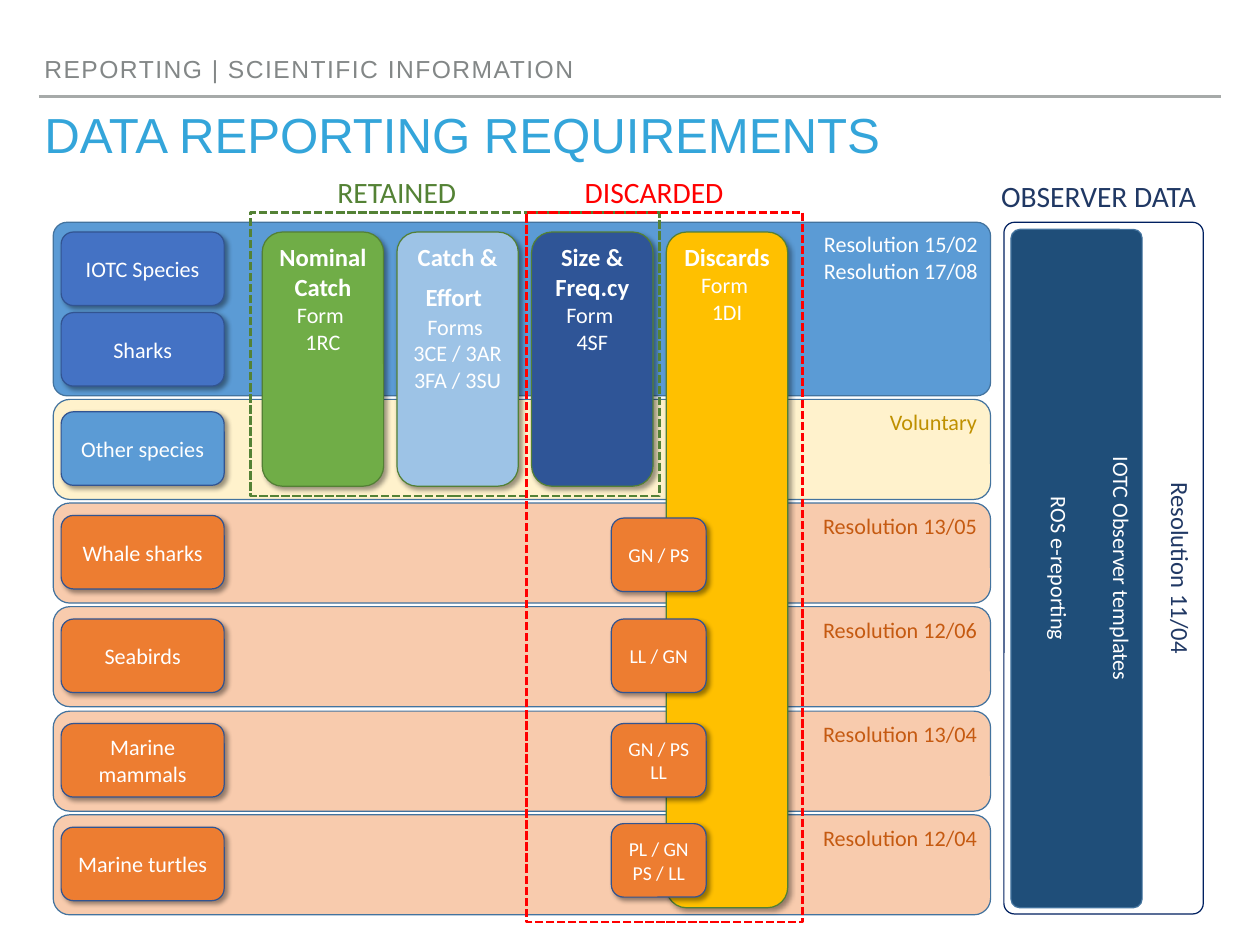
from lxml.etree import SubElement
from pptx import Presentation
from pptx.dml.color import RGBColor
from pptx.enum.dml import MSO_LINE
from pptx.enum.shapes import MSO_CONNECTOR, MSO_SHAPE
from pptx.enum.text import MSO_ANCHOR, MSO_AUTO_SIZE, PP_ALIGN
from pptx.oxml.ns import qn
from pptx.util import Emu, Pt

PX = 9144  # EMU in one px, 100 px to the inch

COLORS = {
    "rule": "A6AAA9", "kicker": "838787", "title": "34A5DA", "white": "FFFFFF",
    "navy": "203864", "navy_line": "002060", "band_line": "43739E",
    "label_line": "325491", "column_line": "538035",
    "blue": "5B9BD5", "cream": "FFF2CC", "peach": "F8CBAD",
    "gold_text": "BF9000", "rust_text": "C55A11",
    "indigo": "4472C4", "orange": "ED7D31", "green": "70AD47",
    "sky": "9DC3E6", "royal": "2F5597", "amber": "FFC000",
    "retained": "548235", "discarded": "FF0000", "observer": "1F4E79",
}

BAND_LEFT, BAND_WIDTH, BAND_HEIGHT = 60, 1058, 113
LABEL_HEIGHT = 83
TOP_LABELS = [("IOTC Species", 262), ("Sharks", 353)]
# label, label fill, resolution, band fill, resolution color
LOWER_ROWS = [
    ("Other species", "blue", "Voluntary", "cream", "gold_text"),
    ("Whale sharks", "orange", "Resolution 13/05", "peach", "rust_text"),
    ("Seabirds", "orange", "Resolution 12/06", "peach", "rust_text"),
    ("Marine mammals", "orange", "Resolution 13/04", "peach", "rust_text"),
    ("Marine turtles", "orange", "Resolution 12/04", "peach", "rust_text"),
]
# heading runs, form lines, fill, height
COLUMNS = [
    ([("Nominal Catch", 20, True)], ["Form ", "1RC"], "green", 287),
    ([("Catch & Effort", 20, True), (" ", 28, True)],
     ["Forms ", "3CE / 3AR", "3FA / 3SU"], "sky", 287),
    ([("Size & Freq.cy", 20, True)], ["Form ", "4SF"], "royal", 287),
    ([("Discards", 20, True)], ["Form ", "1DI"], "amber", 763),
]
GEARS = [("GN / PS", 585), ("LL / GN", 699), ("GN / PS LL", 817), ("PL / GN PS / LL", 930)]


def rgb(name):
    return RGBColor.from_string(COLORS[name])


def place(shape, box):
    shape.left, shape.top, shape.width, shape.height = (Emu(v * PX) for v in box)


def add_run(paragraph, text, size, color, bold=False, font="Calibri"):
    run = paragraph.add_run()
    run.text = text
    run.font.name, run.font.size, run.font.bold = font, Pt(size), bold
    run.font.color.rgb = rgb(color)
    return run


def write(shape, paragraphs, color, align, anchor=MSO_ANCHOR.TOP, gap=0):
    """Each paragraph is a list of (text, size, bold) runs."""
    frame = shape.text_frame
    frame.word_wrap = True
    frame.vertical_anchor = anchor
    for index, runs in enumerate(paragraphs):
        paragraph = frame.add_paragraph() if index else frame.paragraphs[0]
        paragraph.alignment = align
        if index and gap:
            paragraph.space_before = Pt(gap)
        for text, size, bold in runs:
            add_run(paragraph, text, size, color, bold)


def add_box(slide, box, fill, line, kind=MSO_SHAPE.ROUNDED_RECTANGLE, radius=None):
    shape = slide.shapes.add_shape(kind, *(Emu(v * PX) for v in box))
    shape.shadow.inherit = False
    if fill:
        shape.fill.solid()
        shape.fill.fore_color.rgb = rgb(fill)
    else:
        shape.fill.background()
    shape.line.color.rgb = rgb(line)
    shape.line.width = Pt(1)
    if radius:
        shape.adjustments[0] = radius
    return shape


def add_raised_box(slide, box, fill, line):
    shape = add_box(slide, box, fill, line)
    effects = shape.element.spPr.find(qn("a:effectLst"))
    shadow = SubElement(effects, qn("a:outerShdw"), blurRad=str(Pt(4)), dist=str(Pt(3)),
                        dir="2700000", algn="tl", rotWithShape="0")
    black = SubElement(shadow, qn("a:srgbClr"), val="000000")
    SubElement(black, qn("a:alpha"), val="40000")
    return shape


def add_label(slide, text, box, fill, size=18):
    label = add_raised_box(slide, box, fill, "label_line")
    write(label, [[(text, size, False)]], "white", PP_ALIGN.CENTER, MSO_ANCHOR.MIDDLE)


def add_band(slide, top, height, resolutions, fill, color, radius=None):
    band = add_box(slide, (BAND_LEFT, top, BAND_WIDTH, height), fill, "band_line", radius=radius)
    write(band, [[(text, 18, False)] for text in resolutions], color, PP_ALIGN.RIGHT)


def add_vertical_box(slide, box, fill, line, color, lines, size, radius, gap=0):
    shape = add_box(slide, box, fill, line, radius=radius)
    write(shape, [[(text, size, False)] for text in lines], color, PP_ALIGN.CENTER, gap=gap)
    shape.element.txBody.bodyPr.set("vert", "vert")


def add_dashed_frame(slide, box, color):
    frame = add_box(slide, box, None, color, MSO_SHAPE.RECTANGLE)
    frame.line.width = Pt(2.25)
    frame.line.dash_style = MSO_LINE.SQUARE_DOT


def add_caption(slide, text, box, color, wrap=False):
    caption = slide.shapes.add_textbox(*(Emu(v * PX) for v in box))
    write(caption, [[(text, 24, False)]], color, PP_ALIGN.LEFT)
    caption.text_frame.word_wrap = wrap


def fill_placeholder(shape, box, text, size, color, anchor):
    place(shape, box)
    frame = shape.text_frame
    frame.auto_size = MSO_AUTO_SIZE.NONE
    frame.vertical_anchor = anchor
    frame.margin_left = frame.margin_right = Emu(6 * PX)
    frame.margin_top = frame.margin_bottom = Emu(6 * PX)
    paragraph = frame.paragraphs[0]
    paragraph.alignment = PP_ALIGN.LEFT
    paragraph.line_spacing = 0.8
    paragraph.space_before = Pt(0)
    return paragraph, add_run(paragraph, text, size, color, font="Arial")


def add_header(slide):
    rule = slide.shapes.add_connector(
        MSO_CONNECTOR.STRAIGHT, *(Emu(v * PX) for v in (44, 109, 1378, 109)))
    rule.line.color.rgb = rgb("rule")
    rule.line.width = Pt(2)
    SubElement(rule.element.spPr, qn("a:effectLst"))

    paragraph, run = fill_placeholder(
        slide.placeholders[1], (44, 62, 1222, 38),
        "REPORTING | SCIENTIFIC INFORMATION", 20, "kicker", MSO_ANCHOR.BOTTOM)
    properties = paragraph._p.get_or_add_pPr()
    properties.set("marL", "0")
    properties.set("indent", "0")
    SubElement(properties, qn("a:buNone"))
    run._r.get_or_add_rPr().set("spc", "120")

    fill_placeholder(slide.shapes.title, (44, 125, 1333, 79),
                     "DATA REPORTING REQUIREMENTS", 40, "title", MSO_ANCHOR.TOP)


def main():
    presentation = Presentation()
    presentation.slide_width, presentation.slide_height = Emu(1422 * PX), Emu(1067 * PX)
    slide = presentation.slides.add_slide(presentation.slide_layouts[1])
    add_header(slide)

    # Bands with their resolutions
    row_tops = [451 + round(117.25 * index) for index in range(len(LOWER_ROWS))]
    add_band(slide, 251, 196, ["Resolution 15/02", "Resolution 17/08"], "blue", "white", 0.08)
    for top, (_, _, resolution, fill, color) in zip(row_tops, LOWER_ROWS):
        add_band(slide, top, BAND_HEIGHT, [resolution], fill, color)

    # Species labels
    labels = [(text, top, "indigo") for text, top in TOP_LABELS]
    labels += [(row[0], top + 14, row[1]) for top, row in zip(row_tops, LOWER_ROWS)]
    for text, top, fill in labels:
        add_label(slide, text, (69, top, 184, LABEL_HEIGHT), fill)

    # Data columns
    for index, (heading, forms, fill, height) in enumerate(COLUMNS):
        column = add_raised_box(slide, (296 + 152 * index, 262, 137, height), fill, "column_line")
        write(column, [heading] + [[(form, 18, False)] for form in forms],
              "white", PP_ALIGN.CENTER)

    # Fishing gears
    for text, top in GEARS:
        add_label(slide, text, (690, top, 107, LABEL_HEIGHT), "orange", 16)

    # Retained and discarded frames
    add_dashed_frame(slide, (283, 240, 461, 320), "retained")
    add_caption(slide, "RETAINED", (371, 192, 158, 50), "retained")
    add_dashed_frame(slide, (594, 240, 312, 801), "discarded")
    add_caption(slide, "DISCARDED", (650, 192, 178, 50), "discarded")

    # Observer data
    add_vertical_box(slide, (1133, 251, 225, 781), None, "navy_line", "navy",
                     ["Resolution 11/04"], 20, 0.053)
    add_vertical_box(slide, (1141, 259, 148, 766), "observer", "band_line", "white",
                     ["IOTC Observer templates", "ROS e-reporting"], 18, 0.067, gap=29)
    add_caption(slide, "OBSERVER DATA", (1120, 196, 253, 50), "navy", wrap=True)

    presentation.save("out.pptx")


if __name__ == "__main__":
    main()
